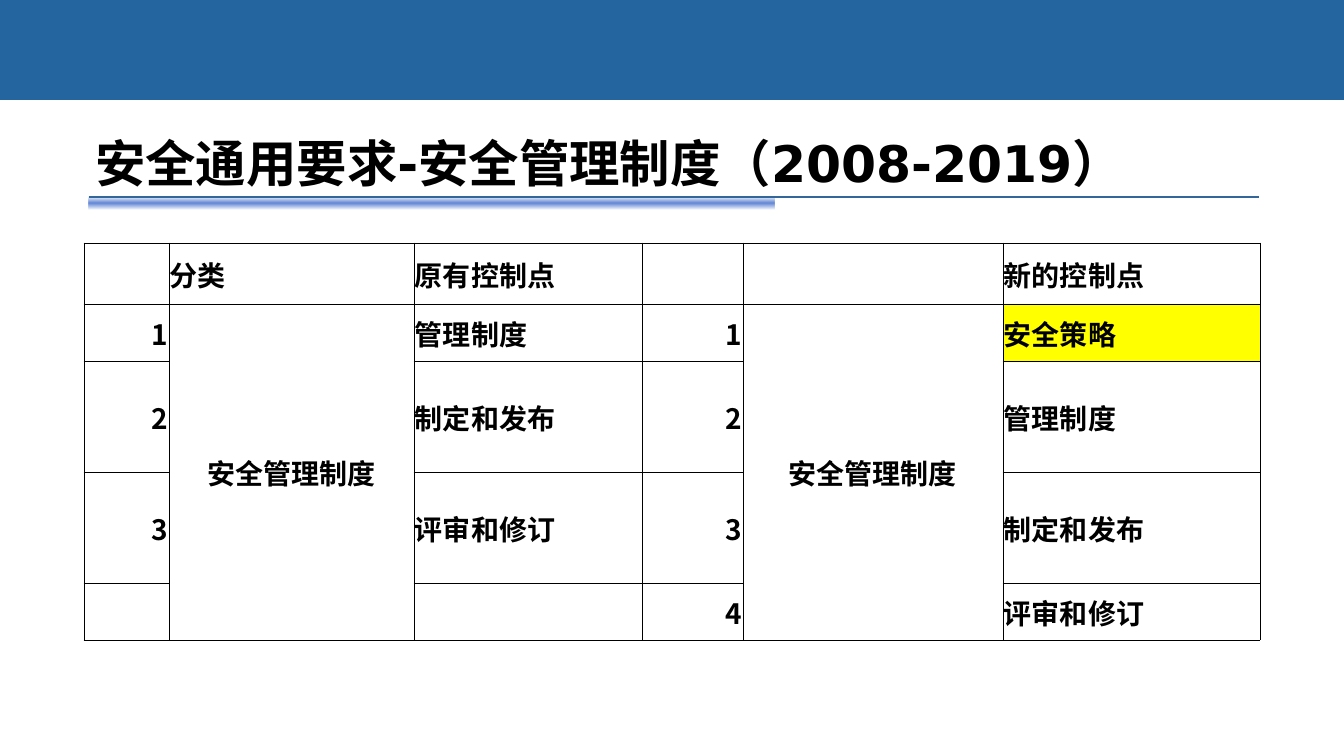
from lxml.etree import SubElement
from pptx import Presentation
from pptx.dml.color import RGBColor
from pptx.enum.shapes import MSO_CONNECTOR, MSO_SHAPE
from pptx.enum.text import MSO_ANCHOR, MSO_AUTO_SIZE, PP_ALIGN
from pptx.oxml import parse_xml
from pptx.oxml.ns import nsdecls, qn
from pptx.util import Pt

PX = 914400 / 100.8
BLACK = RGBColor(0x00, 0x00, 0x00)
YELLOW = RGBColor(0xFF, 0xFF, 0x00)
BANNER = RGBColor(0x25, 0x65, 0x9F)
RULE = RGBColor(0x33, 0x66, 0x99)
GLOW_EDGE = RGBColor(0x57, 0x81, 0xD5)
GLOW_MID = RGBColor(0x63, 0x87, 0xD6)

CJK = "Noto Sans CJK SC"
TITLE_FONT = {"name": "DejaVu Sans", "size": Pt(36), "bold": True}
CELL_FONT = {"name": CJK, "size": Pt(20), "bold": True}

COLS = [85, 245, 228, 101, 260, 257]
ROWS = [61, 57, 111, 111, 57]
CATEGORY = "安全管理制度"
CELLS = [
    ["", "分类", "原有控制点", "", "", "新的控制点"],
    ["1", CATEGORY, "管理制度", "1", CATEGORY, "安全策略"],
    ["2", "", "制定和发布", "2", "", "管理制度"],
    ["3", "", "评审和修订", "3", "", "制定和发布"],
    ["", "", "", "4", "", "评审和修订"],
]
COL_ALIGN = {0: PP_ALIGN.RIGHT, 3: PP_ALIGN.RIGHT}
CATEGORY_COLS = (1, 4)
NEW_POINT = (1, 5)


def px(n):
    """Convert whole pixels to EMU."""
    return round(n * PX)


class SlideBuilder:
    """Hold the current slide and draw styled elements on it."""

    def __init__(self, prs):
        """Add a title-only slide."""
        self.s = prs.slides.add_slide(prs.slide_layouts[5])

    def add_text(self, tf, text, font, align):
        """Add one formatted paragraph."""
        p = tf.paragraphs[0]
        p.alignment = align
        r = p.add_run()
        r.text = text
        for key, value in font.items():
            setattr(r.font, key, value)
        r.font.color.rgb = BLACK
        SubElement(r.font._element, qn("a:ea"), typeface=CJK)

    def title(self, text, x, y, w, h):
        """Place the title in front of the shapes drawn so far."""
        sp = self.s.shapes.title
        sp.left, sp.top, sp.width, sp.height = map(px, (x, y, w, h))
        tf = sp.text_frame
        style = {"vertical_anchor": MSO_ANCHOR.BOTTOM, "word_wrap": True,
                 "auto_size": MSO_AUTO_SIZE.NONE, "margin_left": px(10),
                 "margin_right": px(10), "margin_top": 0, "margin_bottom": 0}
        for key, value in style.items():
            setattr(tf, key, value)
        self.add_text(tf, text, TITLE_FONT, PP_ALIGN.LEFT)
        sp.element.getparent().append(sp.element)

    def rect(self, x, y, w, h, color):
        """Draw a plain filled rectangle."""
        sp = self.s.shapes.add_shape(MSO_SHAPE.RECTANGLE, *map(px, (x, y, w, h)))
        sp.shadow.inherit = False
        sp.line.fill.background()
        sp.fill.solid()
        sp.fill.fore_color.rgb = color
        return sp

    def glow(self, x, y, w, h):
        """Draw a bar that fades out at its top and bottom."""
        sp = self.rect(x, y, w, h, GLOW_MID)
        stops = "".join(
            f'<a:gs pos="{pos}"><a:srgbClr val="{color}"><a:alpha val="{alpha}"/></a:srgbClr></a:gs>'
            for pos, color, alpha in ((0, GLOW_EDGE, 0), (50000, GLOW_MID, 100000), (100000, GLOW_EDGE, 0)))
        solid = sp.element.spPr.find(qn("a:solidFill"))
        solid.getparent().replace(solid, parse_xml(
            f'<a:gradFill {nsdecls("a")} rotWithShape="1"><a:gsLst>{stops}</a:gsLst>'
            '<a:lin ang="5400000" scaled="0"/></a:gradFill>'))

    def line(self, x1, y1, x2, y2, color, width):
        """Draw a straight line."""
        c = self.s.shapes.add_connector(MSO_CONNECTOR.STRAIGHT, *map(px, (x1, y1, x2, y2)))
        c.line.color.rgb = color
        c.line.width = Pt(width)
        SubElement(c.element.spPr, qn("a:effectLst"))

    def borders(self, cell):
        """Give a cell thin black borders on all sides."""
        tc_pr = cell._tc.get_or_add_tcPr()
        for side in "LRTB":
            tc_pr.append(parse_xml(
                f'<a:ln{side} {nsdecls("a")} w="{Pt(0.5)}"><a:solidFill>'
                f'<a:srgbClr val="{BLACK}"/></a:solidFill></a:ln{side}>'))

    def cell(self, cell, text, align, fill):
        """Format and fill one table cell."""
        style = {"vertical_anchor": MSO_ANCHOR.MIDDLE, "margin_left": px(1),
                 "margin_right": px(1), "margin_top": px(1), "margin_bottom": 0}
        for key, value in style.items():
            setattr(cell, key, value)
        self.borders(cell)
        if fill is None:
            cell.fill.background()
        else:
            cell.fill.solid()
            cell.fill.fore_color.rgb = fill
        if text:
            self.add_text(cell.text_frame, text, CELL_FONT, align)

    def table(self, x, y):
        """Draw the comparison of old and new control points."""
        table = self.s.shapes.add_table(
            len(ROWS), len(COLS), px(x), px(y), px(sum(COLS)), px(sum(ROWS))).table
        table.first_row = table.horz_banding = False
        for col, w in zip(table.columns, COLS):
            col.width = px(w)
        for row, h in zip(table.rows, ROWS):
            row.height = px(h)
        for i, texts in enumerate(CELLS):
            for j, text in enumerate(texts):
                align = PP_ALIGN.CENTER if text == CATEGORY else COL_ALIGN.get(j, PP_ALIGN.LEFT)
                fill = YELLOW if (i, j) == NEW_POINT else None
                self.cell(table.cell(i, j), text, align, fill)
        for j in CATEGORY_COLS:
            table.cell(1, j).merge(table.cell(len(ROWS) - 1, j))


def main():
    """Build and save the slide."""
    prs = Presentation()
    prs.slide_width, prs.slide_height = px(1344), px(756)
    b = SlideBuilder(prs)
    b.glow(89, 197, 685, 13)
    b.line(89, 197, 1259, 197, RULE, 0.75)
    b.rect(0, 0, 1344, 100, BANNER)
    b.title("安全通用要求-安全管理制度（2008-2019）", 85, 59, 1176, 134)
    b.table(84, 243)
    prs.save("out.pptx")


if __name__ == "__main__":
    main()
